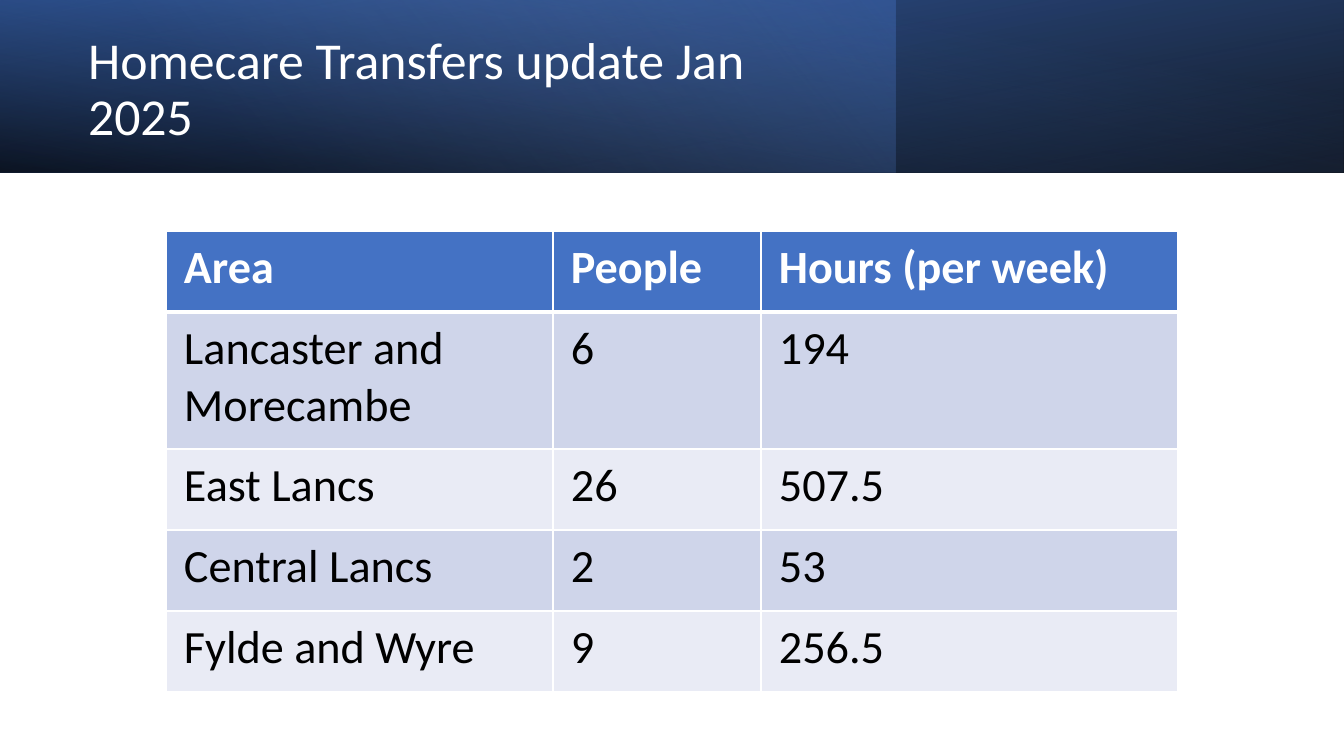
from lxml.etree import SubElement
from pptx import Presentation
from pptx.dml.color import RGBColor
from pptx.enum.shapes import MSO_SHAPE
from pptx.enum.text import MSO_ANCHOR, MSO_AUTO_SIZE, PP_ALIGN
from pptx.oxml.ns import qn
from pptx.util import Emu, Pt

COLORS = {
    "white": "FFFFFF",
    "black": "000000",
    "navy": "2F5597",
    "blue": "4472C4",
    "light blue": "8FAADC",
    "dark band": "CFD5EA",
    "light band": "E9EBF5",
}
FONT = "Calibri"
EMU_PER_PX = 914400 / 100.8
SLIDE_WIDTH, SLIDE_HEIGHT = 1344, 756
BANNER_HEIGHT = 173

TRANSFERS = [
    ["Area", "People", "Hours (per week)"],
    ["Lancaster and Morecambe", "6", "194"],
    ["East Lancs", "26", "507.5"],
    ["Central Lancs", "2", "53"],
    ["Fylde and Wyre", "9", "256.5"],
]
COLUMN_WIDTHS = [387, 208, 417]
ROW_HEIGHTS = [81, 137, 81, 81, 81]


def px(length):
    return Emu(round(length * EMU_PER_PX))


def rgb(name):
    return RGBColor.from_string(COLORS[name])


class SlideBuilder:
    def __init__(self, slide):
        self.slide = slide

    def style_text(self, text_frame, size, color, bold=False):
        for paragraph in text_frame.paragraphs:
            for run in paragraph.runs:
                run.font.name = FONT
                run.font.size = Pt(size)
                run.font.bold = bold
                run.font.color.rgb = rgb(color)

    def gradient_band(self, width, angle, stops, rotation=0, flipped=False):
        """Add a banner layer; stops are (position, colour, opacity percent)."""
        band = self.slide.shapes.add_shape(
            MSO_SHAPE.RECTANGLE, 0, 0, px(width), px(BANNER_HEIGHT))
        band.shadow.inherit = False
        band.line.fill.background()
        band.rotation = rotation
        if flipped:
            band.element.spPr.find(qn("a:xfrm")).set("flipH", "1")
        band.fill.gradient()
        band.fill.gradient_angle = 360 - angle
        for stop, (position, color, _) in zip(band.fill.gradient_stops, stops):
            stop.position = position / 100
            stop.color.rgb = rgb(color)
        color_elements = band.element.spPr.iter(qn("a:srgbClr"))
        for element, (_, _, opacity) in zip(color_elements, stops):
            SubElement(element, qn("a:alpha")).set("val", str(opacity * 1000))

    def title(self, text, left, top, width, height):
        title = self.slide.shapes.title
        title.left, title.top = px(left), px(top)
        title.width, title.height = px(width), px(height)
        # Bring the title in front of the banner.
        title.element.getparent().append(title.element)
        text_frame = title.text_frame
        text_frame.text = text
        text_frame.word_wrap = True
        text_frame.auto_size = MSO_AUTO_SIZE.NONE
        text_frame.vertical_anchor = MSO_ANCHOR.MIDDLE
        text_frame.paragraphs[0].alignment = PP_ALIGN.LEFT
        text_frame.paragraphs[0].line_spacing = 0.9
        self.style_text(text_frame, 37, "white")

    def cell_borders(self, cell, top, bottom):
        properties = cell._tc.get_or_add_tcPr()
        for side, width in (("L", 1), ("R", 1), ("T", top), ("B", bottom)):
            line = SubElement(properties, qn(f"a:ln{side}"), w=str(Pt(width)))
            fill = SubElement(line, qn("a:solidFill"))
            SubElement(fill, qn("a:srgbClr"), val=COLORS["white"])

    def table(self, rows, left, top, column_widths, row_heights):
        table = self.slide.shapes.add_table(
            len(rows), len(column_widths), px(left), px(top),
            px(sum(column_widths)), px(sum(row_heights))).table
        for column, width in zip(table.columns, column_widths):
            column.width = px(width)
        for row, height in zip(table.rows, row_heights):
            row.height = px(height)
        for row_index, values in enumerate(rows):
            header = row_index == 0
            band = "dark band" if row_index % 2 else "light band"
            for column_index, value in enumerate(values):
                cell = table.cell(row_index, column_index)
                cell.text_frame.text = value
                cell.margin_left = cell.margin_right = px(18)
                cell.margin_top = cell.margin_bottom = px(9)
                self.cell_borders(cell, top=3 if row_index == 1 else 1,
                                  bottom=3 if header else 1)
                cell.fill.solid()
                cell.fill.fore_color.rgb = rgb("blue" if header else band)
                self.style_text(cell.text_frame, 33,
                                "white" if header else "black", header)


def main():
    presentation = Presentation()
    presentation.slide_width = px(SLIDE_WIDTH)
    presentation.slide_height = px(SLIDE_HEIGHT)
    title_only = presentation.slide_layouts[5]
    builder = SlideBuilder(presentation.slides.add_slide(title_only))

    builder.gradient_band(SLIDE_WIDTH, 100,
                          [(0, "black", 96), (100, "navy", 100)],
                          rotation=180, flipped=True)
    builder.gradient_band(896, 140, [(0, "blue", 41), (74, "light blue", 0)])
    builder.gradient_band(SLIDE_WIDTH, 260,
                          [(0, "black", 63), (78, "blue", 15)], flipped=True)
    builder.title("Homecare Transfers update Jan 2025", 78, 27, 778, 128)
    builder.table(TRANSFERS, 166, 231, COLUMN_WIDTHS, ROW_HEIGHTS)

    presentation.save("out.pptx")


if __name__ == "__main__":
    main()
